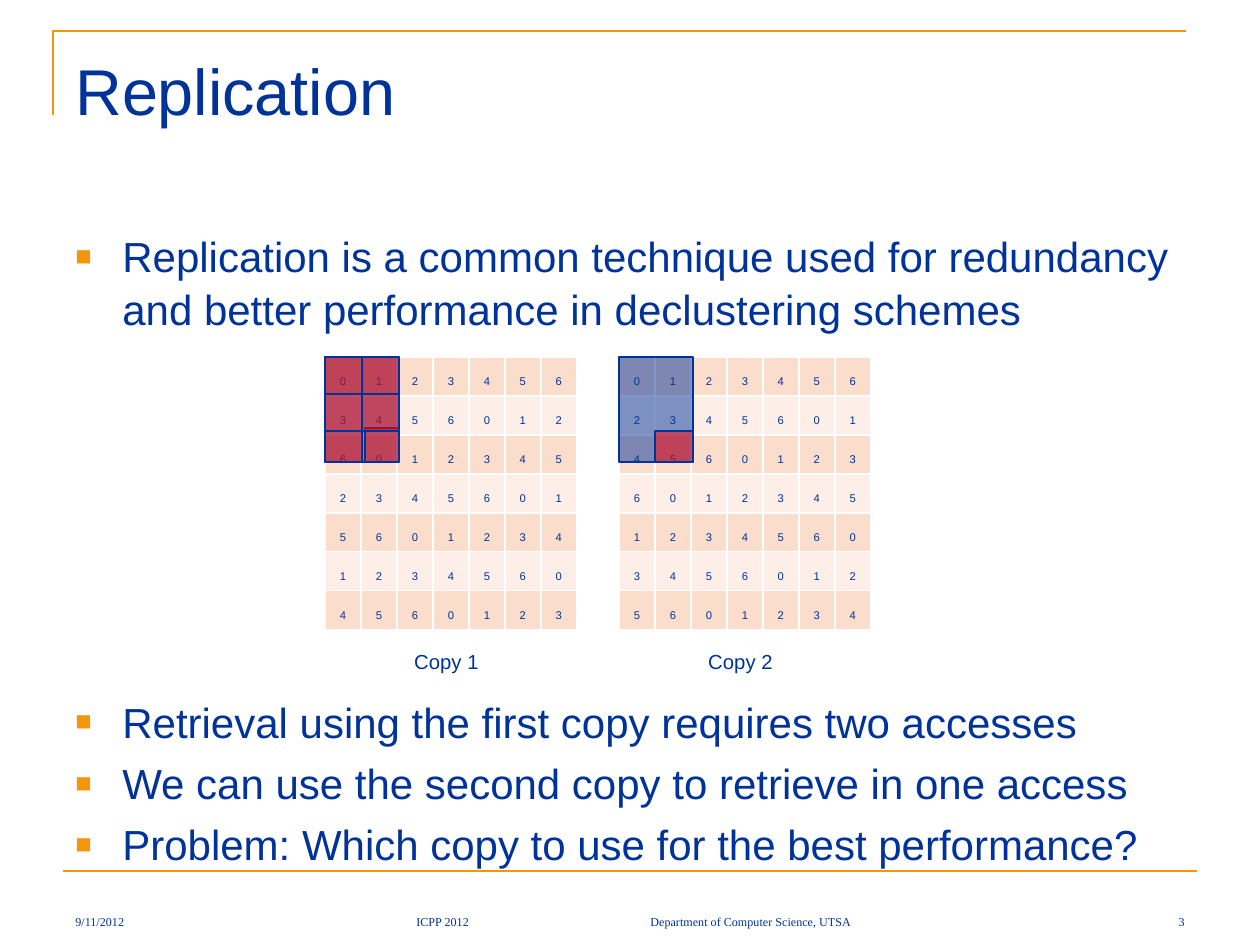
from lxml.etree import SubElement as Sub
from pptx import Presentation
from pptx.dml.color import RGBColor as RGB
from pptx.enum.shapes import MSO_CONNECTOR as LINK, MSO_SHAPE as SHAPE
from pptx.enum.text import MSO_ANCHOR as ANCHOR, PP_ALIGN as ALIGN
from pptx.oxml import parse_xml
from pptx.oxml.ns import qn, nsdecls
from pptx.util import Emu, Pt

PX = 914400 / 126
BLUE, GOLD, RED = "003399", "F4960C", "FF0000"


def rgb(code):
    return RGB.from_string(code)


def style(para, size, face="Arial", align=ALIGN.LEFT, sub=False):
    para.alignment = align
    for run in para.runs:
        font = run.font
        font.size, font.name = Pt(size), face
        font.color.rgb = rgb(BLUE)
        if sub:
            font._element.set("baseline", "-25000")


deck = Presentation()
deck.slide_width, deck.slide_height = Emu(9144000), Emu(6858000)
slide = deck.slides.add_slide(deck.slide_layouts[6])
shapes = slide.shapes

pen = shapes.build_freeform(53, 115, scale=PX)
pen.add_line_segments([(53, 31), (1186, 31)], close=False)
frame = pen.convert_to_shape()
frame.fill.background()
frame.shadow.inherit = False
rule = shapes.add_connector(LINK.STRAIGHT, *[Emu(round(n * PX)) for n in (63, 871, 1197, 871)])
Sub(rule._element.spPr, qn("a:effectLst"))
for edge in (frame, rule):
    edge.line.color.rgb = rgb(GOLD)
    edge.line.width = Pt(1.5)

labels = [
    ("Replication", (63, 45, 1008, 150), 37, "Arial", ALIGN.LEFT, ANCHOR.TOP, False),
    ("Copy 1", (378, 620, 137, 56), 20, "Arial", ALIGN.CENTER, ANCHOR.TOP, True),
    ("Copy 2", (672, 620, 137, 56), 20, "Arial", ALIGN.CENTER, ANCHOR.TOP, True),
]
foot = [
    ("9/11/2012", 63, 294, ALIGN.LEFT),
    ("ICPP 2012", 404, 200, ALIGN.LEFT),
    ("Department of Computer Science, UTSA", 638, 260, ALIGN.LEFT),
    ("3", 903, 294, ALIGN.RIGHT),
]
for text, x, w, align in foot:
    labels.append((text, (x, 872, w, 63), 12, "Times New Roman", align, ANCHOR.BOTTOM, True))
for text, area, size, face, align, anchor, sub in labels:
    box = shapes.add_textbox(*[Emu(round(n * PX)) for n in area])
    box.text_frame.word_wrap = True
    box.text_frame.vertical_anchor = anchor
    box.text_frame.text = text
    style(box.text_frame.paragraphs[0], size, face, align, sub)

points = [
    ("Replication is a common technique used for redundancy and better performance in declustering schemes", 0),
    ("Retrieval using the first copy requires two accesses", 205.5),
    ("We can use the second copy to retrieve in one access", 4.8),
    ("Problem: Which copy to use for the best performance?", 4.8),
]
body = shapes.add_textbox(*[Emu(round(n * PX)) for n in (63, 222, 1134, 624)])
body.text_frame.word_wrap = True
body.text_frame.text = "\n".join(text for text, gap in points)
for para, (text, gap) in zip(body.text_frame.paragraphs, points):
    para.line_spacing = 1.05
    para.space_before = Pt(gap)
    props = para._p.get_or_add_pPr()
    props.set("marL", str(round(47 * PX)))
    props.set("indent", str(round(-47 * PX)))
    Sub(Sub(props, qn("a:buClr")), qn("a:srgbClr"), val=GOLD)
    Sub(props, qn("a:buSzPct"), val="65000")
    Sub(props, qn("a:buFont"), typeface="Arial")
    Sub(props, qn("a:buChar"), char="■")
    style(para, 24)

for left, step in ((325, 3), (619, 2)):
    area = [Emu(round(n * PX)) for n in (left, 357, 252, 259)]
    table = shapes.add_table(7, 7, *area).table
    table.first_row = False
    for row in range(7):
        table.rows[row].height = Emu(round(37 * PX))
        for col in range(7):
            cell = table.cell(row, col)
            cell.text_frame.text = str((step * row + col) % 7)
            style(cell.text_frame.paragraphs[0], 11, align=ALIGN.CENTER, sub=True)
            props = cell._tc.get_or_add_tcPr()
            for side in "LRTB":
                props.append(parse_xml(
                    f'<a:ln{side} w="12700" {nsdecls("a")}><a:solidFill>'
                    f'<a:srgbClr val="FFFFFF"/></a:solidFill></a:ln{side}>'))
            cell.fill.solid()
            cell.fill.fore_color.rgb = rgb("FDEFE7" if row % 2 else "FBDDCC")

marks = [
    (325, 357, 74, 105, BLUE),
    (619, 357, 74, 105, BLUE),
    (325, 357, 37, 37, RED),
    (365, 428, 34, 34, RED),
    (655, 431, 38, 31, RED),
    (362, 357, 37, 37, RED),
    (362, 394, 37, 37, RED),
    (325, 394, 37, 37, RED),
    (325, 431, 37, 31, RED),
]
for *area, tint in marks:
    mark = shapes.add_shape(SHAPE.RECTANGLE, *[Emu(round(n * PX)) for n in area])
    mark.shadow.inherit = False
    mark.fill.solid()
    mark.fill.fore_color.rgb = rgb(tint)
    Sub(mark._element.spPr.find(".//" + qn("a:srgbClr")), qn("a:alpha"), val="50000")
    mark.line.color.rgb = rgb(BLUE)
    mark.line.width = Pt(0.75)

deck.save("out.pptx")
